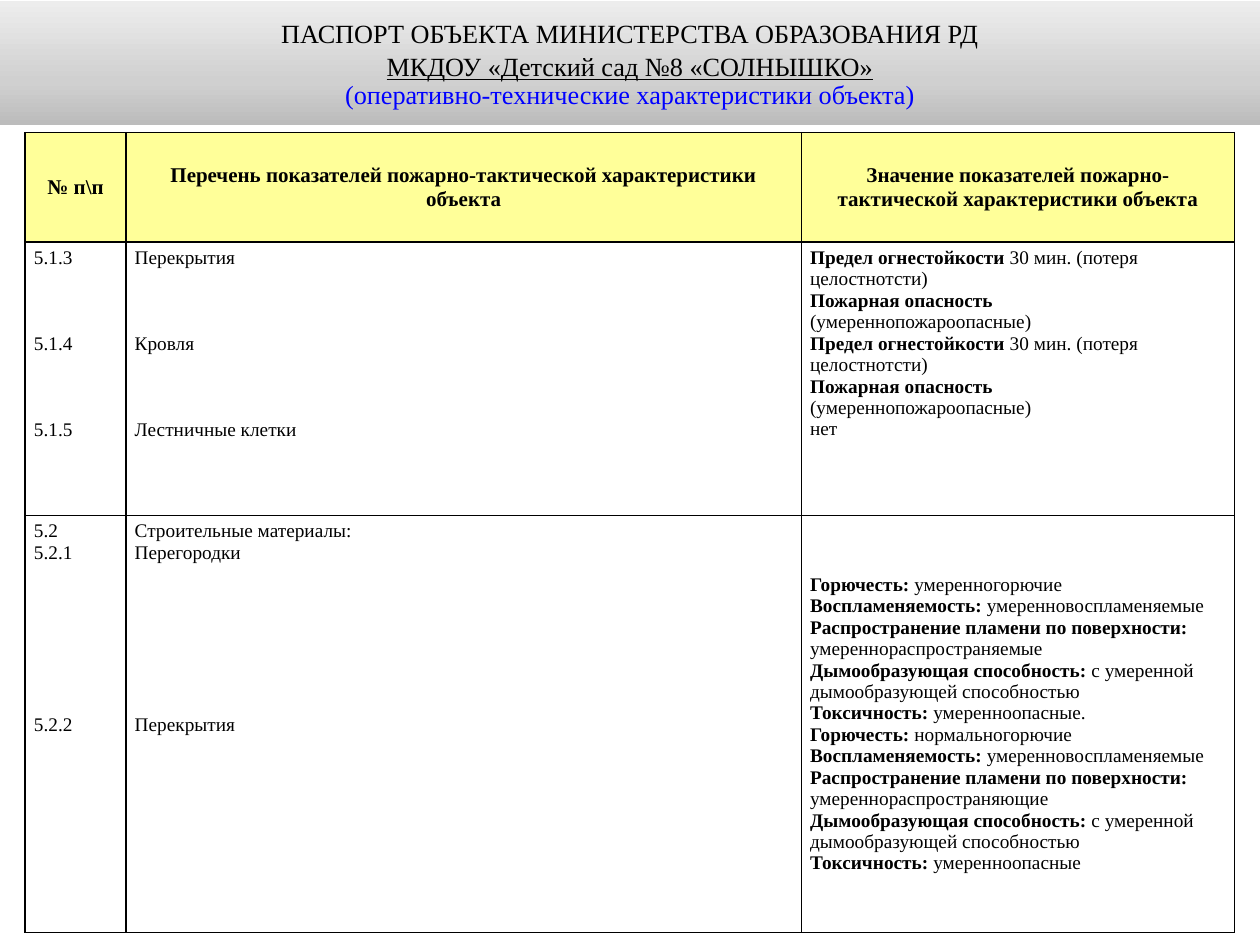
import copy
import pptx
import pptx.util
import pptx.dml.color
import pptx.enum.shapes
import pptx.enum.text
import pptx.oxml
import pptx.oxml.ns

Pt = pptx.util.Pt
ALIGN = pptx.enum.text.PP_ALIGN
ANCHOR = pptx.enum.text.MSO_ANCHOR
FONT = "Times New Roman"
LINE = 12.28  # height of one line of body text
COLORS = {"ink": "000000", "blue": "0000FF", "head": "FFFF99", "body": "FFFFFF"}
GRAY = [(0, "BCBCBC"), (0.35, "D0D0D0"), (1, "EDEDED")]

# Content: a paragraph is (bold part, plain part, empty lines above)
TITLE = [
    ("ПАСПОРТ ОБЪЕКТА МИНИСТЕРСТВА ОБРАЗОВАНИЯ РД", {}),
    ("МКДОУ «Детский сад №8 «СОЛНЫШКО»", {"line": True}),
    ("(оперативно-технические характеристики объекта)",
     {"color": "blue", "space": 0.8}),
]
HEADS = [
    "№ п\\п",
    "Перечень показателей пожарно-тактической характеристики объекта",
    "Значение показателей пожарно-тактической характеристики объекта",
]
LIMIT = [
    ("Предел огнестойкости ", "30 мин. (потеря целостнотсти)", 0),
    ("Пожарная опасность", "", 0),
    ("", "(умереннопожароопасные)", 0),
]


def traits(burn, spread, toxic):
    return [
        ("Горючесть:", " " + burn, 0),
        ("Воспламеняемость: ", "умеренновоспламеняемые", 0),
        ("Распространение пламени по поверхности:", "", 0),
        ("", spread, 0),
        ("Дымообразующая способность: ",
         "с умеренной дымообразующей способностью", 0),
        ("Токсичность:", " " + toxic, 0),
    ]


ROWS = [
    [
        [("", "5.1.3", 0), ("", "5.1.4", 3), ("", "5.1.5", 3)],
        [("", "Перекрытия", 0), ("", "Кровля", 3), ("", "Лестничные клетки", 3)],
        LIMIT + LIMIT + [("", "нет", 0)],
    ],
    [
        [("", "5.2", 0), ("", "5.2.1", 0), ("", "5.2.2", 7)],
        [("", "Строительные материалы:", 0), ("", "Перегородки", 0),
         ("", "Перекрытия", 7)],
        traits("умеренногорючие", "умереннораспространяемые", "умеренноопасные.")
        + traits("нормальногорючие", "умереннораспространяющие", "умеренноопасные"),
    ],
]
WIDTHS = [57.6, 385.92, 247.68]
HEIGHTS = [62.64, 156.24, 238.32]


def rgb(name):
    return pptx.dml.color.RGBColor.from_string(COLORS[name])


def write(frame, bold="", plain="", size=11, color="ink", line=False,
          align=ALIGN.LEFT, above=0, space=None):
    """Add one paragraph, reusing the first one while it is empty."""
    para = frame.paragraphs[0]
    if para.runs:
        para = frame.add_paragraph()
    para.alignment = align
    if above:
        para.space_before = Pt(above)
    if space:
        para.line_spacing = space
    for text, heavy in ((bold, True), (plain, False)):
        if text:
            run = para.add_run()
            run.text = text
            font = run.font
            font.name, font.size, font.bold = FONT, Pt(size), heavy
            font.underline = line
            font.color.rgb = rgb(color)


def border(cell):
    props = cell._tc.get_or_add_tcPr()
    for spot, side in enumerate(("lnL", "lnR", "lnT", "lnB")):
        props.insert(spot, pptx.oxml.parse_xml(
            f'<a:{side} {pptx.oxml.ns.nsdecls("a")} w="12700"><a:solidFill>'
            f'<a:srgbClr val="{COLORS["ink"]}"/></a:solidFill></a:{side}>'))


def dress(cell, fill, anchor):
    cell.fill.solid()
    cell.fill.fore_color.rgb = rgb(fill)
    cell.vertical_anchor = anchor
    cell.margin_left = cell.margin_right = Pt(5)
    cell.margin_top = cell.margin_bottom = Pt(2.9)
    border(cell)


deck = pptx.Presentation()
deck.slide_width, deck.slide_height = Pt(720), Pt(540)
slide = deck.slides.add_slide(deck.slide_layouts[6])

# Table
table = slide.shapes.add_table(
    len(HEIGHTS), len(WIDTHS), Pt(14.4), Pt(75.8),
    Pt(sum(WIDTHS)), Pt(sum(HEIGHTS))).table
for col, width in zip(table.columns, WIDTHS):
    col.width = Pt(width)
for row, height in zip(table.rows, HEIGHTS):
    row.height = Pt(height)
for c, text in enumerate(HEADS):
    cell = table.cell(0, c)
    dress(cell, "head", ANCHOR.MIDDLE)
    write(cell.text_frame, bold=text, size=12, align=ALIGN.CENTER)
for r, row in enumerate(ROWS, 1):
    for c, paras in enumerate(row):
        cell = table.cell(r, c)
        dress(cell, "body", ANCHOR.MIDDLE if (r, c) == (2, 2) else ANCHOR.TOP)
        for bold, plain, gap in paras:
            write(cell.text_frame, bold, plain, above=gap * LINE)

# Title band
band = slide.shapes.add_shape(
    pptx.enum.shapes.MSO_SHAPE.RECTANGLE, 0, Pt(0.7), Pt(720), Pt(70.6))
band.shadow.inherit = False
band.line.fill.background()
band.fill.gradient()
band.fill.gradient_angle = 90
stops = band._element.spPr.find(".//" + pptx.oxml.ns.qn("a:gsLst"))
stops.append(copy.deepcopy(stops[-1]))
for stop, (spot, tone) in zip(band.fill.gradient_stops, GRAY):
    stop.position = spot
    stop.color.rgb = pptx.dml.color.RGBColor.from_string(tone)
frame = band.text_frame
frame.word_wrap = True
frame.vertical_anchor = ANCHOR.MIDDLE
for text, style in TITLE:
    write(frame, plain=text, size=15, align=ALIGN.CENTER, above=1.2, **style)

deck.save("out.pptx")
